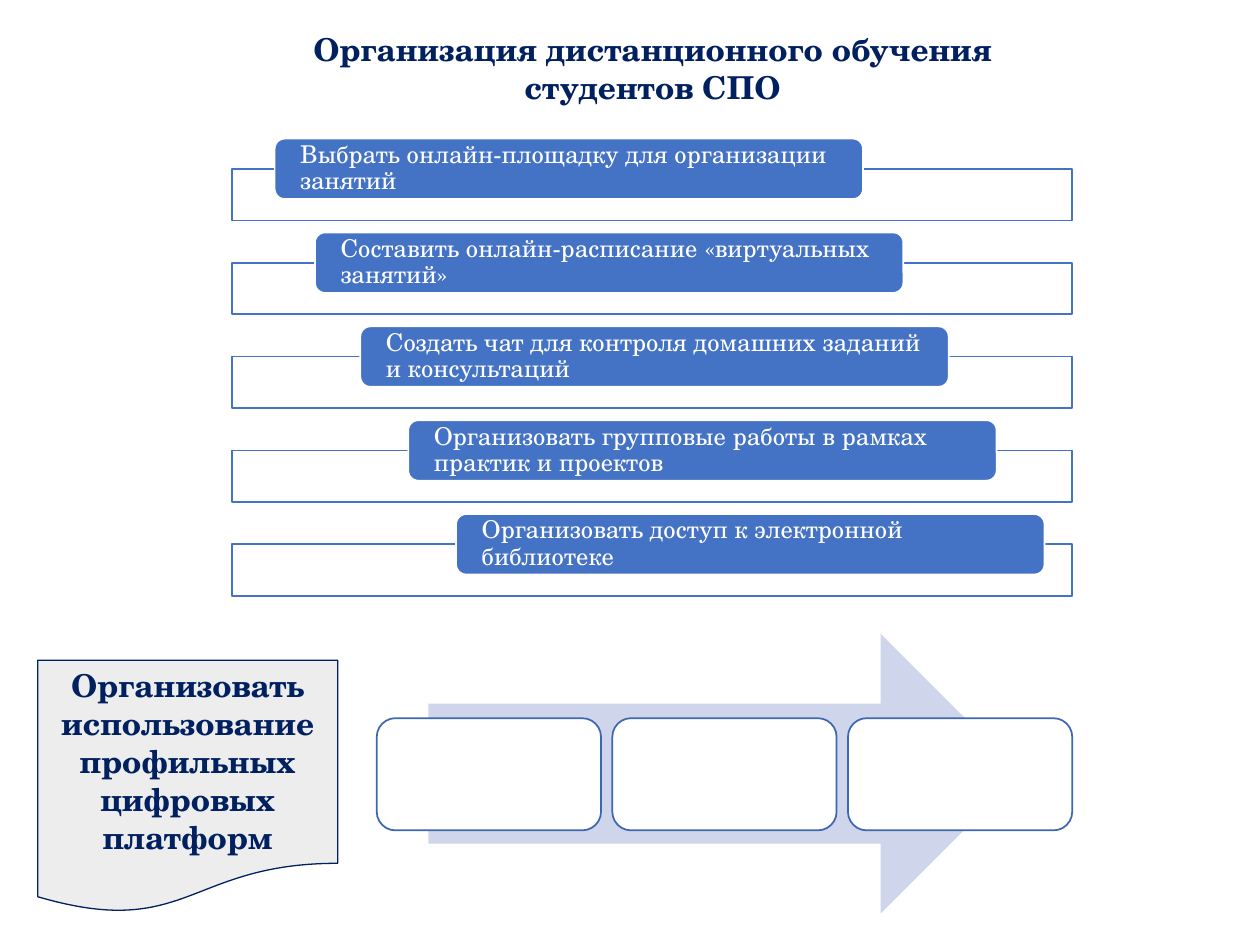
"""Build a slide on organising distance learning for college students."""
from pptx import Presentation
from pptx.dml.color import RGBColor
from pptx.enum.shapes import MSO_SHAPE
from pptx.enum.text import MSO_ANCHOR, PP_ALIGN
from pptx.util import Inches, Pt

TITLE = "Организация дистанционного обучения студентов СПО"
STEPS = [
    (2.18, "Выбрать онлайн-площадку для организации занятий"),
    (2.50, "Составить онлайн-расписание «виртуальных занятий»"),
    (2.86, "Создать чат для контроля домашних заданий и консультаций"),
    (3.24, "Организовать групповые работы в рамках практик и проектов"),
    (3.62, "Организовать доступ к электронной библиотеке"),
]
PLATFORM_NOTE = ["Организовать", "использование", "профильных", "цифровых", "платформ"]
PLATFORM_COUNT = 3

FONT = "TeX Gyre Schola"
COLORS = {
    "navy": "002060",
    "blue": "4472C4",
    "outline": "3E67B2",
    "arrow": "CFD5EA",
    "note": "EDEDED",
    "white": "FFFFFF",
}
STEP_TOP, STEP_PITCH, FRAME_OFFSET = 1.10, 0.745, 0.24
CARD_LEFT, CARD_PITCH = 2.99, 1.87


def color(name):
    return RGBColor.from_string(COLORS[name])


def add_box(slide, kind, box, fill, line=None, width=1):
    shape = slide.shapes.add_shape(kind, *map(Inches, box))
    shape.shadow.inherit = False
    shape.fill.solid()
    shape.fill.fore_color.rgb = color(fill)
    if line:
        shape.line.color.rgb = color(line)
        shape.line.width = Pt(width)
    else:
        shape.line.fill.background()
    return shape


def write(shape, lines, size, text_color, bold=False, align=PP_ALIGN.CENTER, spacing=1.0):
    frame = shape.text_frame
    frame.word_wrap = True
    for index, line in enumerate(lines):
        paragraph = frame.paragraphs[0] if index == 0 else frame.add_paragraph()
        paragraph.alignment = align
        paragraph.line_spacing = spacing
        run = paragraph.add_run()
        run.text = line
        run.font.name = FONT
        run.font.size = Pt(size)
        run.font.bold = bold
        run.font.color.rgb = color(text_color)
    return frame


def add_step(slide, index, left, text):
    top = STEP_TOP + index * STEP_PITCH
    add_box(slide, MSO_SHAPE.RECTANGLE, (1.84, top + FRAME_OFFSET, 6.67, 0.41), "white", "blue")
    label = add_box(slide, MSO_SHAPE.ROUNDED_RECTANGLE, (left, top, 4.67, 0.48), "blue", "white")
    frame = write(label, [text], 14, "white", align=PP_ALIGN.LEFT, spacing=0.9)
    frame.vertical_anchor = MSO_ANCHOR.MIDDLE
    frame.margin_left = frame.margin_right = Inches(0.18)
    frame.margin_top = frame.margin_bottom = 0


def main():
    presentation = Presentation()
    presentation.slide_width = Inches(10)
    presentation.slide_height = Inches(7.5)
    slide = presentation.slides.add_slide(presentation.slide_layouts[6])

    title = slide.shapes.add_textbox(*map(Inches, (2.02, 0.19, 6.32, 0.71)))
    write(title, [TITLE], 18, "navy", bold=True)

    for index, (left, text) in enumerate(STEPS):
        add_step(slide, index, left, text)

    add_box(slide, MSO_SHAPE.RIGHT_ARROW, (3.4, 5.03, 4.7, 2.22), "arrow")
    for index in range(PLATFORM_COUNT):
        left = CARD_LEFT + index * CARD_PITCH
        add_box(slide, MSO_SHAPE.ROUNDED_RECTANGLE, (left, 5.7, 1.78, 0.89), "white", "outline")

    note = add_box(slide, MSO_SHAPE.FLOWCHART_DOCUMENT, (0.3, 5.24, 2.38, 2.01), "note", "navy", 0.75)
    write(note, PLATFORM_NOTE, 18, "navy", bold=True).vertical_anchor = MSO_ANCHOR.TOP

    presentation.save("out.pptx")


if __name__ == "__main__":
    main()
